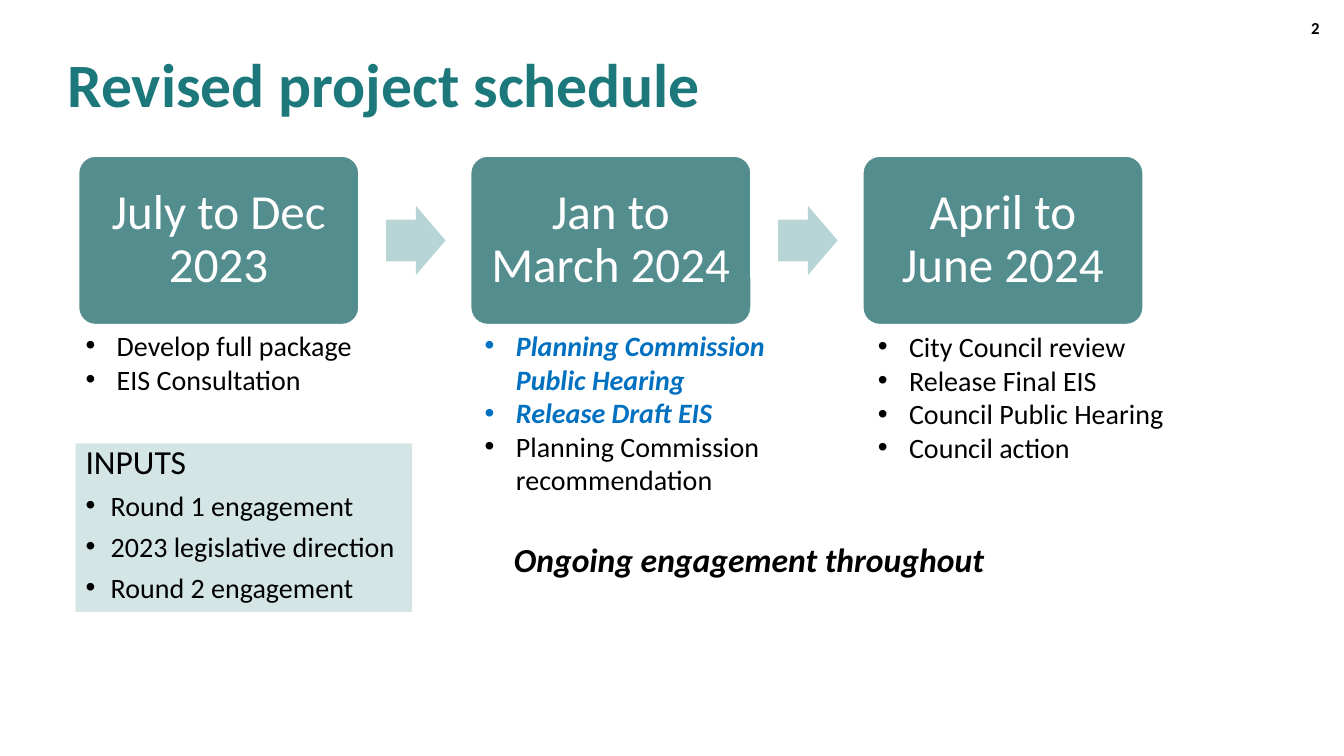
from dataclasses import dataclass

from lxml import etree
from pptx import Presentation
from pptx import util as u
from pptx.dml import color
from pptx.enum import shapes, text
from pptx.oxml import ns

COLUMNS, ROWS = 133.33, 75


@dataclass(frozen=True)
class Theme:
    face: str = "Calibri"
    teal: str = "1C787A"
    stage: str = "548D8E"
    arrow: str = "B8D5D6"
    panel: str = "D3E5E5"
    accent: str = "0070C0"
    ink: str = "000000"
    paper: str = "FFFFFF"
    title: int = 44
    period: int = 35
    heading: int = 24
    body: int = 20
    number: int = 12


def apply(target, values):
    for name, value in values.items():
        setattr(target, name, value)


class SchedulePage:
    def __init__(self, deck, theme):
        self.theme = theme
        self.column = deck.slide_width / COLUMNS
        self.row = deck.slide_height / ROWS
        self.page = deck.slides.add_slide(deck.slide_layouts[6])

    def place(self, left, top, width, height):
        return (round(left * self.column), round(top * self.row),
                round(width * self.column), round(height * self.row))

    def shape(self, kind, area, fill, adjustments=(), outline=None):
        box = self.page.shapes.add_shape(kind, *self.place(*area))
        box.shadow.inherit = False
        for index, value in enumerate(adjustments):
            box.adjustments[index] = value
        box.fill.solid()
        box.fill.fore_color.rgb = color.RGBColor.from_string(fill)
        if outline:
            box.line.color.rgb = color.RGBColor.from_string(outline)
            box.line.width = u.Pt(1)
        else:
            box.line.fill.background()
        return box

    def textbox(self, area, lines, frame=None, **common):
        box = self.page.shapes.add_textbox(*self.place(*area))
        self.label(box, lines, frame, **common)

    def label(self, box, lines, frame=None, **common):
        apply(box.text_frame, {"word_wrap": True,
                               "vertical_anchor": text.MSO_ANCHOR.TOP,
                               **(frame or {})})
        for index, (wording, own) in enumerate(lines):
            para = (box.text_frame.add_paragraph() if index
                    else box.text_frame.paragraphs[0])
            self.paragraph(para, wording, **{**common, **own})

    def paragraph(self, para, wording, size, ink=None, indent=0, layout=None,
                  **font):
        if indent:
            self.bullet(para, indent)
        apply(para, {"alignment": text.PP_ALIGN.LEFT, **(layout or {})})
        span = para.add_run()
        span.text = wording
        apply(span.font, {"name": self.theme.face, "size": u.Pt(size), **font})
        span.font.color.rgb = color.RGBColor.from_string(ink or self.theme.ink)

    def bullet(self, para, indent):
        properties = para._p.get_or_add_pPr()
        hang = round(indent * self.column)
        properties.set("marL", str(hang))
        properties.set("indent", str(-hang))
        etree.SubElement(properties, ns.qn("a:buFont"), typeface="Arial")
        etree.SubElement(properties, ns.qn("a:buChar"), char="•")

    def stage(self, left, period):
        box = self.shape(shapes.MSO_SHAPE.ROUNDED_RECTANGLE,
                         (left, 15.5, 27.8, 16.7), self.theme.stage, [0.1],
                         self.theme.paper)
        sides = ("left", "top", "right", "bottom")
        margins = {f"margin_{side}": u.Inches(0.15) for side in sides}
        self.label(box, [(period, {})],
                   {"vertical_anchor": text.MSO_ANCHOR.MIDDLE, **margins},
                   size=self.theme.period, ink=self.theme.paper,
                   layout={"alignment": text.PP_ALIGN.CENTER,
                           "line_spacing": 0.9})

    def arrow(self, left):
        self.shape(shapes.MSO_SHAPE.RIGHT_ARROW, (left, 20.4, 5.9, 6.9),
                   self.theme.arrow, [0.6, 0.5])


def main():
    deck = Presentation()
    apply(deck, {"slide_width": u.Inches(13.33), "slide_height": u.Inches(7.5)})
    theme = Theme()
    page = SchedulePage(deck, theme)
    middle = {"vertical_anchor": text.MSO_ANCHOR.MIDDLE}
    grow = {"auto_size": text.MSO_AUTO_SIZE.SHAPE_TO_FIT_TEXT}
    urgent = {"ink": theme.accent, "bold": True, "italic": True}

    page.textbox((5.7, 1.4, 115, 14.5), [("Revised project schedule", {})],
                 middle, size=theme.title, ink=theme.teal, bold=True,
                 layout={"line_spacing": 0.9})
    page.textbox((101.9, 0.8, 30, 4), [("2", {})], middle, size=theme.number,
                 bold=True, layout={"alignment": text.PP_ALIGN.RIGHT})

    stages = [
        ("July to Dec 2023", (7.5, 32.1, 35.3, 13.8),
         [("Develop full package", {}), ("EIS Consultation", {})]),
        ("Jan to March 2024", (47.1, 32.1, 30.3, 17.8),
         [("Planning Commission Public Hearing", urgent),
          ("Release Draft EIS", urgent),
          ("Planning Commission recommendation", {})]),
        ("April to June 2024", (86.1, 32.2, 31.5, 14.5),
         [("City Council review", {}), ("Release Final EIS", {}),
          ("Council Public Hearing", {}), ("Council action", {})]),
    ]
    for index, (period, area, tasks) in enumerate(stages):
        left = 7.8 + index * 38.9
        page.stage(left, period)
        if index < len(stages) - 1:
            page.arrow(left + 30.5)
        page.textbox(area, tasks, grow, size=theme.body, indent=3.1)

    page.textbox((50, 53, 49.2, 9.1), [("Ongoing engagement throughout", {})],
                 grow, size=theme.heading, bold=True, italic=True)

    inputs = page.shape(shapes.MSO_SHAPE.RECTANGLE, (7.5, 44, 33.4, 16.7),
                        theme.panel)
    item = {"indent": 2.5,
            "layout": {"line_spacing": 0.8, "space_before": u.Pt(10)}}
    sources = ["Round 1 engagement", "2023 legislative direction",
               "Round 2 engagement"]
    page.label(inputs, [("INPUTS", {"size": theme.heading,
                                    "layout": {"line_spacing": 0.8}})]
               + [(source, item) for source in sources], size=theme.body)

    deck.save("out.pptx")


if __name__ == "__main__":
    main()
